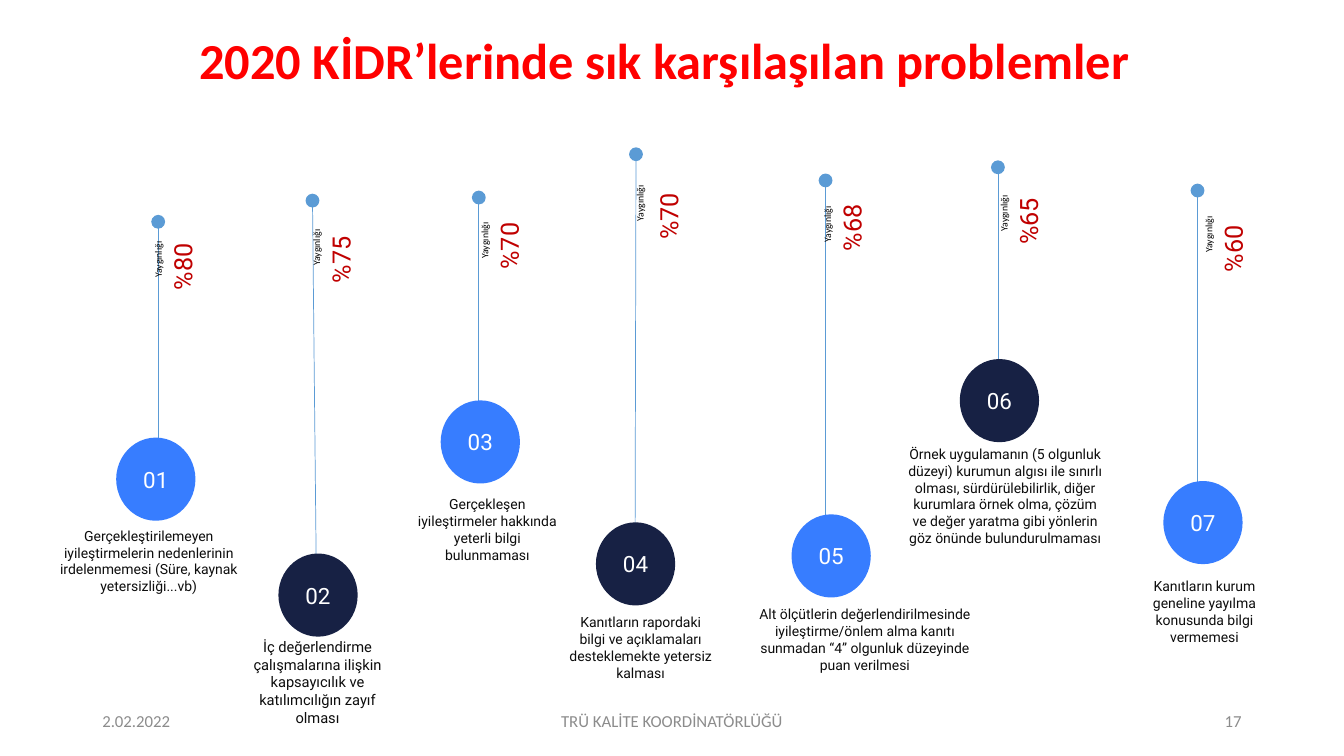
from dataclasses import dataclass

from pptx import Presentation
from pptx.dml.color import RGBColor
from pptx.enum import shapes, text
from pptx.oxml import ns
from pptx.util import Pt
from lxml import etree

COLORS = {
    "title": "FF0000",
    "stem": "5B9BD5",
    "odd": "377DFF",
    "even": "172144",
    "number": "FFFFFF",
    "label": "000000",
    "share": "C00000",
    "caption": "0D0D0D",
    "footer": "8C8C8C",
}
CIRCLE_WIDTH, CIRCLE_HEIGHT = 52.6, 55.4
LEFT, CENTER, RIGHT = text.PP_ALIGN.LEFT, text.PP_ALIGN.CENTER, text.PP_ALIGN.RIGHT


@dataclass
class Problem:
    """One problem with the boxes of its circle, stem, share and caption."""
    share: str
    caption: str
    circle: tuple
    stem_bottom_x: float
    stem_top: tuple
    label_box: tuple
    caption_box: tuple
    caption_size: float = 10


PROBLEMS = [
    Problem("%80", "Gerçekleştirilemeyen iyileştirmelerin nedenlerinin irdelenmemesi (Süre, kaynak yetersizliği...vb)",
            (85, 314.6), 113, (113, 158.4), (105.1, 165.6, 31.7, 57.6), (27.4, 373, 157.7, 79.9)),
    Problem("%75", "İç değerlendirme çalışmalarına ilişkin kapsayıcılık ve katılımcılığın zayıf olması",
            (200.9, 397.4), 226.1, (223.2, 143.3), (218.2, 157, 31.7, 64.8), (162.7, 452.2, 128.2, 83.5), 10.5),
    Problem("%70", "Gerçekleşen iyileştirmeler hakkında yeterli bilgi bulunmaması",
            (316.8, 288), 342, (342, 141.1), (338.4, 151.9, 31.7, 55.4), (289.4, 350.6, 117.4, 55.4)),
    Problem("%70", "Kanıtların rapordaki bilgi ve açıklamaları desteklemekte yetersiz kalması",
            (427.7, 375.1), 453.6, (454.3, 110.2), (449.3, 125.3, 40.3, 66.2), (398.9, 434.9, 117.4, 55.4)),
    Problem("%68", "Alt ölçütlerin değerlendirilmesinde iyileştirme/önlem alma kanıtı sunmadan “4” olgunluk düzeyinde puan verilmesi",
            (567.4, 369.4), 589.7, (589.7, 128.9), (583.2, 140.4, 31.7, 52.6), (533.5, 429.1, 168.5, 67.7)),
    Problem("%65", "Örnek uygulamanın (5 olgunluk düzeyi) kurumun algısı ile sınırlı olması, sürdürülebilirlik, diğer kurumlara örnek olma, çözüm ve değer yaratma gibi yönlerin göz önünde bulundurulmaması",
            (687.6, 258.5), 712.8, (712.8, 119.5), (709.2, 132.5, 31.7, 59), (639.4, 314.6, 157, 79.9)),
    Problem("%60", "Kanıtların kurum geneline yayılma konusunda bilgi vermemesi",
            (833, 345.6), 855.4, (855.4, 136.1), (855.4, 147.6, 31.7, 67.7), (804.2, 409, 112.3, 55.4)),
]


def color(name):
    """Return the named colour."""
    return RGBColor.from_string(COLORS[name])


def write(shape, words, size, font, color_name, align=CENTER, bold=False):
    """Write one formatted run into the shape."""
    paragraph = shape.text_frame.paragraphs[0]
    paragraph.alignment = align
    run = paragraph.add_run()
    run.text = words
    run.font.size = Pt(size)
    run.font.name = font
    run.font.bold = bold
    run.font.color.rgb = color(color_name)


def add_text(slide, box, words, size, font, color_name, align=CENTER, vertical=False, wrap=True):
    """Add a text box that grows with its words."""
    shape = slide.shapes.add_textbox(*map(Pt, box))
    frame = shape.text_frame
    frame.word_wrap = wrap
    frame.auto_size = text.MSO_AUTO_SIZE.SHAPE_TO_FIT_TEXT
    if vertical:
        frame._txBody.bodyPr.set("vert", "vert270")
    write(shape, words, size, font, color_name, align)
    return shape


def add_title(slide, box):
    """Fill and place the title."""
    title = slide.shapes.title
    title.left, title.top, title.width, title.height = map(Pt, box)
    title.text_frame.vertical_anchor = text.MSO_ANCHOR.TOP
    title.text_frame.auto_size = text.MSO_AUTO_SIZE.SHAPE_TO_FIT_TEXT
    write(title, "2020 KİDR’lerinde sık karşılaşılan problemler", 36, "Calibri", "title", bold=True)


def add_stem(slide, start, end):
    """Add a thin stem with a large dot at its end."""
    stem = slide.shapes.add_connector(shapes.MSO_CONNECTOR.STRAIGHT, *map(Pt, start + end))
    stem.line.color.rgb = color("stem")
    stem.line.width = Pt(0.5)
    dot = etree.SubElement(stem.line._get_or_add_ln(), ns.qn("a:tailEnd"))
    for key, value in (("type", "oval"), ("w", "lg"), ("len", "lg")):
        dot.set(key, value)
    etree.SubElement(stem._element.spPr, ns.qn("a:effectLst"))


def add_circle(slide, box, number):
    """Add a numbered circle, coloured by turns."""
    circle = slide.shapes.add_shape(shapes.MSO_SHAPE.OVAL, *map(Pt, box))
    circle.shadow.inherit = False
    fill = color("odd" if number % 2 else "even")
    circle.fill.solid()
    circle.fill.fore_color.rgb = fill
    circle.line.color.rgb = fill
    circle.line.width = Pt(4)
    frame = circle.text_frame
    frame.margin_left = frame.margin_right = 0
    frame.vertical_anchor = text.MSO_ANCHOR.MIDDLE
    write(circle, f"{number:02}", 16, "Roboto", "number")


def add_share(slide, box, share):
    """Add the upright label and the percentage beside it."""
    left, top, width, height = box
    add_text(slide, box, "Yaygınlığı", 7, "Calibri", "label", RIGHT, vertical=True)
    share_box = (left + 0.34 * width, top - 7, 1.15 * width, height + 6.3)
    add_text(slide, share_box, share, 18, "Roboto", "share", vertical=True, wrap=False)


def add_problem(slide, number, problem):
    """Add one problem around its circle."""
    left, top = problem.circle
    add_stem(slide, (problem.stem_bottom_x, top + CIRCLE_HEIGHT / 2), problem.stem_top)
    add_circle(slide, (left, top, CIRCLE_WIDTH, CIRCLE_HEIGHT), number)
    add_share(slide, problem.label_box, problem.share)
    add_text(slide, problem.caption_box, problem.caption, problem.caption_size, "Roboto", "caption")


def add_footer(slide, box):
    """Add date, office and page number along the bottom."""
    left, top, width, height = box
    parts = [
        ("2.02.2022", left, 216, LEFT),
        ("TRÜ KALİTE KOORDİNATÖRLÜĞÜ", left + (width - 324) / 2, 324, CENTER),
        ("17", left + width - 216, 216, RIGHT),
    ]
    for words, part_left, part_width, align in parts:
        shape = add_text(slide, (part_left, top, part_width, height), words, 12, "Calibri", "footer", align)
        shape.text_frame.auto_size = text.MSO_AUTO_SIZE.NONE
        shape.text_frame.vertical_anchor = text.MSO_ANCHOR.MIDDLE


def main():
    """Build and save the slide."""
    presentation = Presentation()
    presentation.slide_width, presentation.slide_height = Pt(960), Pt(540)
    slide = presentation.slides.add_slide(presentation.slide_layouts[5])
    add_title(slide, (52.6, 17.3, 844.6, 51.1))
    for number, problem in enumerate(PROBLEMS, 1):
        add_problem(slide, number, problem)
    add_footer(slide, (66, 500.5, 828, 28.8))
    presentation.save("out.pptx")


if __name__ == "__main__":
    main()
